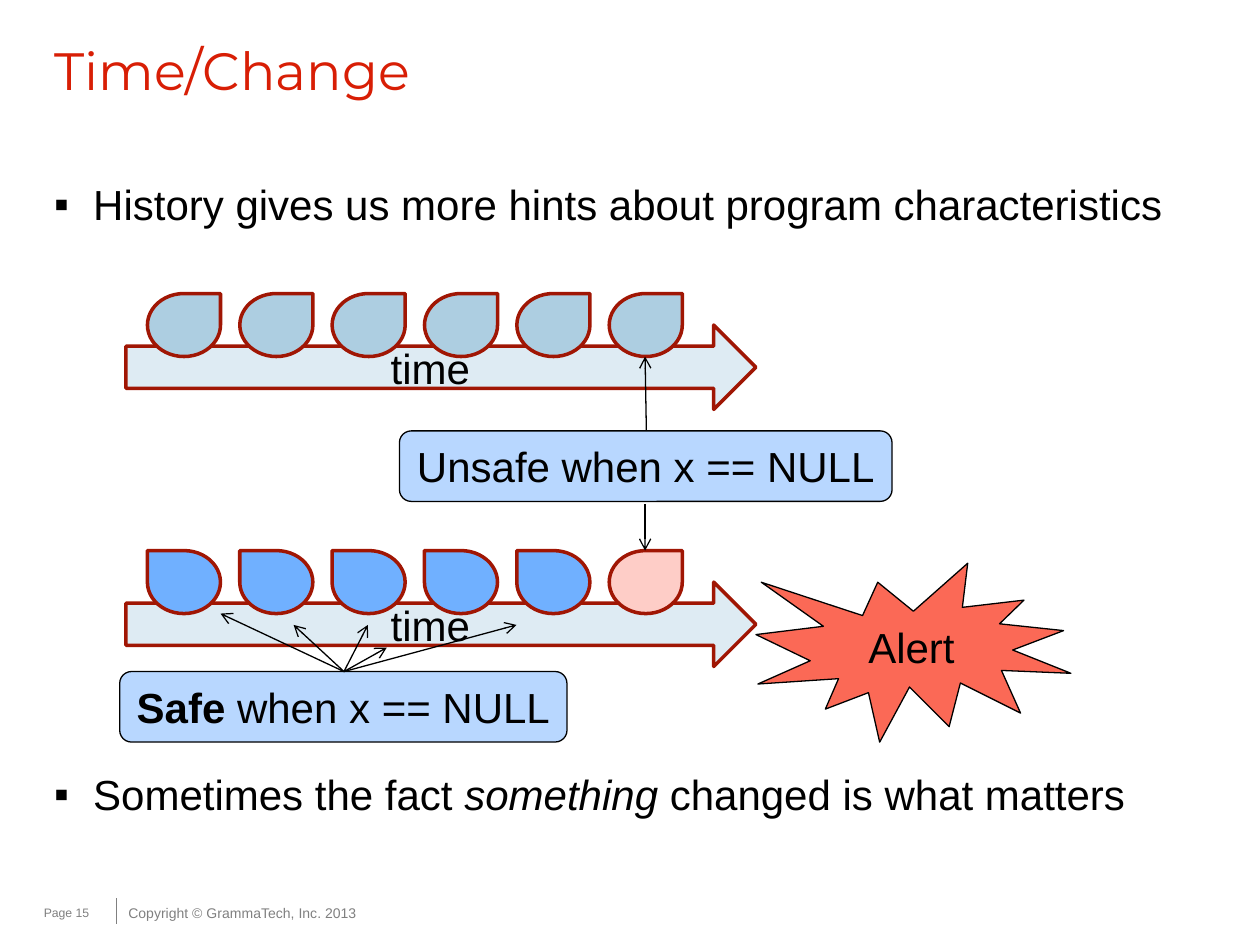
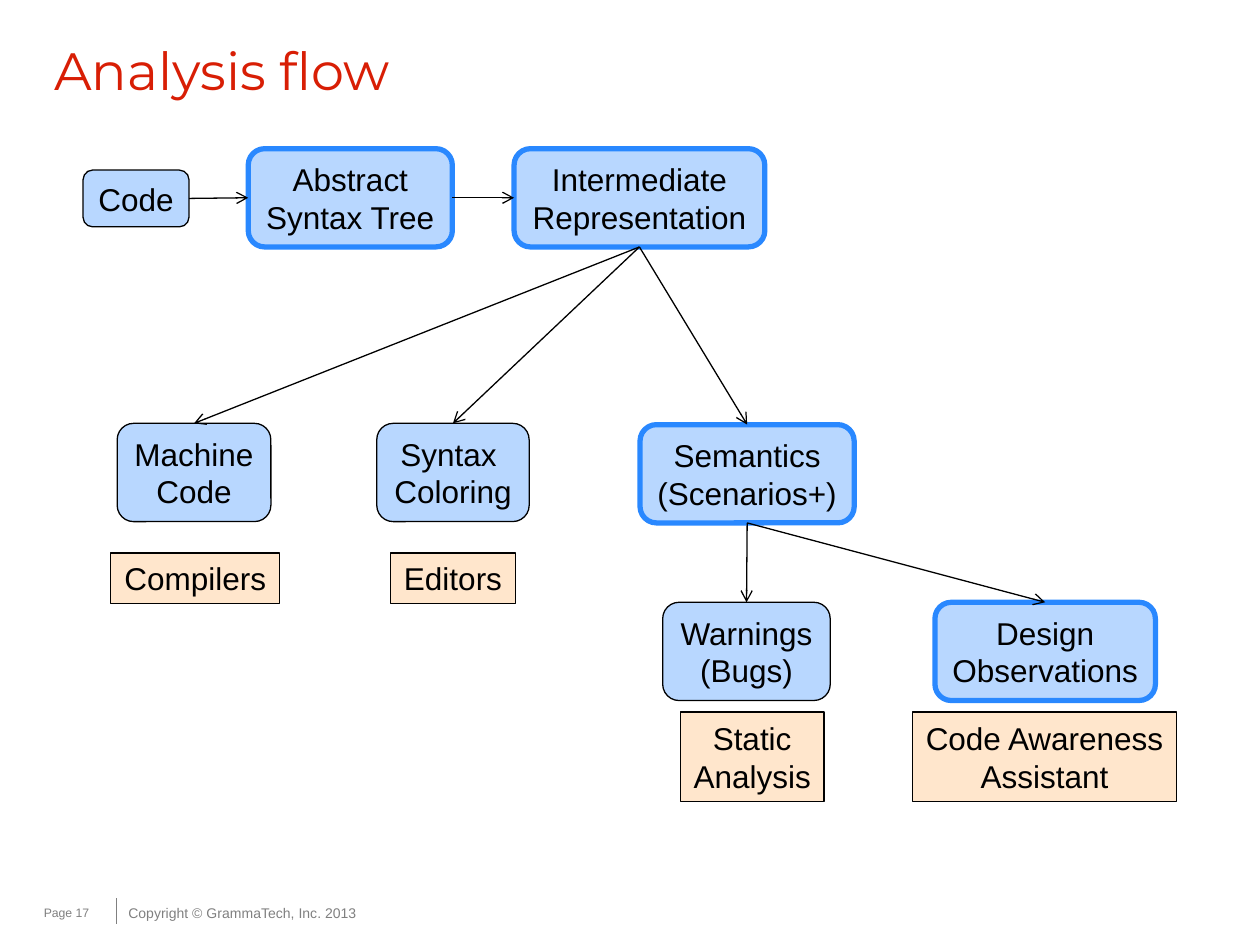
from lxml.etree import SubElement
from pptx import Presentation
from pptx.dml.color import RGBColor
from pptx.enum.shapes import MSO_CONNECTOR, MSO_SHAPE
from pptx.enum.text import MSO_ANCHOR, MSO_AUTO_SIZE, PP_ALIGN
from pptx.oxml.ns import qn
from pptx.util import Inches, Pt

# Shared look
rgb = RGBColor.from_string
RED, GREY, BLACK = "D81E05", "808080", "000000"
PALE, BLUE, RUST, PEACH = "B8D7FF", "2988FF", "A01604", "FFE6CC"
ROUND, RECT, TEAR = MSO_SHAPE.ROUNDED_RECTANGLE, MSO_SHAPE.RECTANGLE, MSO_SHAPE.TEAR


def box(page, kind, at, fill, edge=BLACK, width=0.75, text="", size=24, wrap=False):
    shape = page.shapes.add_shape(kind, *[Inches(v) for v in at])
    shape.shadow.inherit = False
    shape.fill.solid()
    shape.fill.fore_color.rgb = rgb(fill)
    shape.line.color.rgb = rgb(edge)
    shape.line.width = Pt(width)
    if text:
        frame = shape.text_frame
        frame.text = text
        frame.word_wrap = wrap
        frame.vertical_anchor = MSO_ANCHOR.MIDDLE
        for para in frame.paragraphs:
            para.alignment = PP_ALIGN.CENTER
            font = para.runs[0].font
            font.name, font.size = "Arial", Pt(size)
            font.color.rgb = rgb(BLACK)
    return shape


def link(page, start, end, edge=BLACK, width=0.75, head=True):
    line = page.shapes.add_connector(
        MSO_CONNECTOR.STRAIGHT, *[Inches(v) for v in (*start, *end)])
    line.line.color.rgb = rgb(edge)
    line.line.width = Pt(width)
    props = line.element.spPr
    if head:
        SubElement(props.find(qn("a:ln")), qn("a:tailEnd"), type="arrow")
    SubElement(props, qn("a:effectLst"))
    return line


deck = Presentation()
deck.slide_width, deck.slide_height = Inches(10), Inches(7.5)

# Titles and footers of both slides
pages = []
for layout, title, number in [(1, "Time/Change", 15), (5, "Analysis flow", 17)]:
    page = deck.slides.add_slide(deck.slide_layouts[layout])
    pages.append(page)
    link(page, (0.92, 7.13), (0.92, 7.33), GREY, 0.25, head=False)

    head = page.shapes.title
    head.left, head.top = Inches(0.33), Inches(0.25)
    head.width, head.height = Inches(9.42), Inches(0.92)
    frame = head.text_frame
    frame.text = title
    frame.auto_size = MSO_AUTO_SIZE.NONE
    frame.vertical_anchor = MSO_ANCHOR.TOP
    frame.paragraphs[0].alignment = PP_ALIGN.LEFT
    font = frame.paragraphs[0].runs[0].font
    font.name, font.size = "Montserrat", Pt(30)
    font.color.rgb = rgb(RED)

    for left, width, size, text in [
        (0.92, 3.17, 8, "Copyright © GrammaTech, Inc. 2013"),
        (0.25, 0.67, 7, f"Page {number}"),
    ]:
        foot = page.shapes.add_textbox(
            Inches(left), Inches(7.08), Inches(width), Inches(0.33))
        frame = foot.text_frame
        frame.text = text
        frame.word_wrap = True
        frame.vertical_anchor = MSO_ANCHOR.MIDDLE
        font = frame.paragraphs[0].runs[0].font
        font.name, font.size = "Arial", Pt(size)
        font.color.rgb = rgb(GREY)

time, flow = pages

# Time/Change: two bullets, above and below the drawing
body = time.placeholders[1]
body.left, body.top = Inches(0.33), Inches(1.33)
body.width, body.height = Inches(9.42), Inches(5.42)
frame = body.text_frame
frame.auto_size = MSO_AUTO_SIZE.NONE
frame.vertical_anchor = MSO_ANCHOR.TOP
frame.margin_top = Inches(0.09)
frame.text = "History gives us more hints about program characteristics\nSometimes the fact "
first, last = frame.paragraphs
for text in ("something ", "changed is what matters"):
    last.add_run().text = text
for para, gap in [(first, 0), (last, 308)]:
    props = para._p.get_or_add_pPr()
    props.set("marL", str(Inches(0.31)))
    props.set("indent", str(-Inches(0.31)))
    SubElement(props, qn("a:buFont"), typeface="Arial")
    SubElement(props, qn("a:buChar"), char="▪")
    para.space_before = Pt(gap)
    for run in para.runs:
        run.font.name, run.font.size = "Arial", Pt(24)
        run.font.color.rgb = rgb(BLACK)
last.runs[1].font.italic = True

# Two time lines with six drops each
STEP = 0.733
for top, fill, final in [(2.33, "ADCEE1", "ADCEE1"), (4.37, "70B0FF", "FECDC7")]:
    box(time, MSO_SHAPE.RIGHT_ARROW, (1, top + 0.25, 5, 0.67), "DEEBF3",
        RUST, 2, "time", wrap=True)
    for i in range(6):
        tint = final if i == 5 else fill
        drop = box(time, TEAR, (1.17 + i * STEP, top, 0.58, 0.5), tint, RUST, 2)
        if tint == "70B0FF":
            drop.element.spPr.find(qn("a:xfrm")).set("flipH", "1")

# Labels and their arrows
box(time, ROUND, (3.17, 3.42, 3.91, 0.56), PALE, text="Unsafe when x == NULL")
link(time, (5.13, 3.42), (5.12, 2.83))
link(time, (5.12, 4), (5.12, 4.37))
box(time, MSO_SHAPE.EXPLOSION1, (6, 4.47, 2.5, 1.42), "FB6956", text="Alert", wrap=True)
safe = box(time, ROUND, (0.95, 5.33, 3.55, 0.56), PALE, text="Safe")
para = safe.text_frame.paragraphs[0]
para.runs[0].font.bold = True
rest = para.add_run()
rest.text = " when x == NULL"
rest.font.name, rest.font.size = "Arial", Pt(24)
rest.font.color.rgb = rgb(BLACK)
for end in [(1.75, 4.87), (2.33, 4.96), (2.92, 4.96), (3.07, 5.14), (4.1, 4.96)]:
    link(time, (2.73, 5.33), end)

# Analysis flow: steps, with a thick blue edge on the key ones
steps = {}
for name, at, key, text in [
    ("code", (0.66, 1.35, 0.84, 0.45), False, "Code"),
    ("tree", (1.97, 1.18, 1.62, 0.78), True, "Abstract\nSyntax Tree"),
    ("inter", (4.08, 1.18, 1.99, 0.78), True, "Intermediate\nRepresentation"),
    ("machine", (0.93, 3.36, 1.22, 0.78), False, "Machine\nCode"),
    ("syntax", (2.99, 3.36, 1.21, 0.78), False, "Syntax \nColoring"),
    ("sense", (5.08, 3.37, 1.7, 0.78), True, "Semantics\n(Scenarios+)"),
    ("warn", (5.26, 4.78, 1.33, 0.78), False, "Warnings\n(Bugs)"),
    ("design", (7.42, 4.78, 1.75, 0.78), True, "Design\nObservations"),
]:
    edge, width = (BLUE, 3) if key else (BLACK, 0.75)
    steps[name] = box(flow, ROUND, at, PALE, edge, width, text, 18)

# Arrows glued to the steps
TOP, LEFT, BOTTOM, RIGHT = range(4)
for start, out, end, into in [
    ("code", RIGHT, "tree", LEFT),
    ("tree", RIGHT, "inter", LEFT),
    ("inter", BOTTOM, "machine", TOP),
    ("inter", BOTTOM, "syntax", TOP),
    ("inter", BOTTOM, "sense", TOP),
    ("sense", BOTTOM, "warn", TOP),
    ("sense", BOTTOM, "design", TOP),
]:
    line = link(flow, (0, 0), (1, 1))
    line.begin_connect(steps[start], out)
    line.end_connect(steps[end], into)

# Tools that use each result
for at, text in [
    ((0.88, 4.39, 1.34, 0.4), "Compilers"),
    ((3.1, 4.39, 0.99, 0.4), "Editors"),
    ((5.4, 5.65, 1.14, 0.71), "Static\nAnalysis"),
    ((7.24, 5.65, 2.1, 0.71), "Code Awareness\nAssistant"),
]:
    box(flow, RECT, at, PEACH, text=text, size=18)

deck.save("out.pptx")
